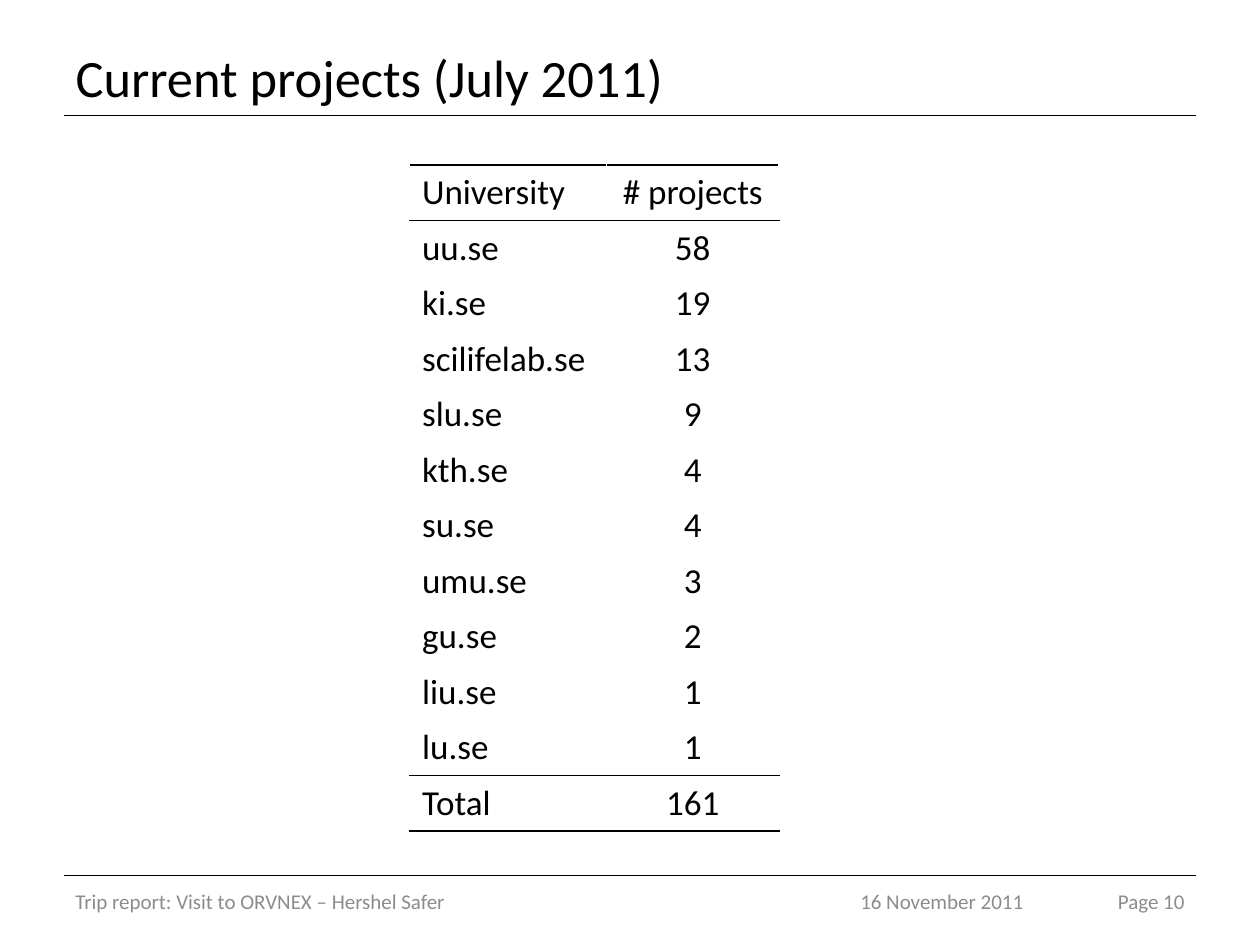
import pptx
import pptx.dml.color
import pptx.enum.shapes
import pptx.enum.text
import pptx.oxml
import pptx.oxml.ns
import pptx.util

Pt = pptx.util.Pt
ALIGN = pptx.enum.text.PP_ALIGN
MIDDLE = pptx.enum.text.MSO_ANCHOR.MIDDLE
FONT = "Calibri"
BLACK, WHITE, GREY = "000000", "FFFFFF", "8C8C8C"

PROJECTS = [
    ("University", "# projects"),
    ("uu.se", "58"),
    ("ki.se", "19"),
    ("scilifelab.se", "13"),
    ("slu.se", "9"),
    ("kth.se", "4"),
    ("su.se", "4"),
    ("umu.se", "3"),
    ("gu.se", "2"),
    ("liu.se", "1"),
    ("lu.se", "1"),
    ("Total", "161"),
]


def color(hex_string):
    return pptx.dml.color.RGBColor.from_string(hex_string)


def write(text_frame, text, size, hex_string, alignment=ALIGN.LEFT):
    paragraph = text_frame.paragraphs[0]
    paragraph.alignment = alignment
    run = paragraph.add_run()
    run.text = text
    run.font.name = FONT
    run.font.size = Pt(size)
    run.font.color.rgb = color(hex_string)


def add_rule(slide, left, right, y):
    connector = slide.shapes.add_connector(
        pptx.enum.shapes.MSO_CONNECTOR.STRAIGHT, Pt(left), Pt(y), Pt(right), Pt(y))
    connector.line.color.rgb = color(BLACK)
    connector.line.width = Pt(0.75)
    properties = connector._element.spPr
    properties.append(pptx.oxml.parse_xml(
        f'<a:effectLst {pptx.oxml.ns.nsdecls("a")}/>'))


def set_borders(cell, **sides):
    properties = cell._tc.get_or_add_tcPr()
    for index, side in enumerate("LRTB"):
        properties.insert(index, pptx.oxml.parse_xml(
            f'<a:ln{side} {pptx.oxml.ns.nsdecls("a")} w="{Pt(1)}"><a:solidFill>'
            f'<a:srgbClr val="{sides.get(side, WHITE)}"/></a:solidFill></a:ln{side}>'))


def add_title(slide, left, top, width, height):
    title = slide.shapes.title
    title.left, title.top = Pt(left), Pt(top)
    title.width, title.height = Pt(width), Pt(height)
    title.text_frame.vertical_anchor = MIDDLE
    write(title.text_frame, "Current projects (July 2011)", 30, BLACK)


def add_project_table(slide, left, top, column_widths, row_height, height):
    frame = slide.shapes.add_table(
        len(PROJECTS), len(column_widths), Pt(left), Pt(top),
        Pt(sum(column_widths)), Pt(height))
    table = frame.table
    table.first_row = False
    table.horz_banding = False
    for column, width in zip(table.columns, column_widths):
        column.width = Pt(width)
    for row in table.rows:
        row.height = Pt(row_height)
    frame.height = Pt(height)

    # Black rules surround the header and total rows only
    last = len(PROJECTS) - 1
    for row_index, values in enumerate(PROJECTS):
        above = BLACK if row_index in (0, 1, last) else WHITE
        below = BLACK if row_index in (0, last - 1, last) else WHITE
        for column_index, value in enumerate(values):
            cell = table.cell(row_index, column_index)
            cell.fill.background()
            set_borders(cell, T=above, B=below)
            alignment = ALIGN.CENTER if column_index else ALIGN.LEFT
            write(cell.text_frame, value, 20, BLACK, alignment)


def add_footer(slide, top, height):
    parts = [
        ("Trip report: Visit to ORVNEX – Hershel Safer", 36, 432, ALIGN.LEFT),
        ("Page 10", 609, 75, ALIGN.RIGHT),
        ("16 November 2011", 473, 130.5, ALIGN.CENTER),
    ]
    for text, left, width, alignment in parts:
        box = slide.shapes.add_textbox(Pt(left), Pt(top), Pt(width), Pt(height))
        box.text_frame.word_wrap = True
        box.text_frame.vertical_anchor = MIDDLE
        write(box.text_frame, text, 12, GREY, alignment)


def main():
    presentation = pptx.Presentation()
    presentation.slide_width, presentation.slide_height = Pt(720), Pt(540)
    slide = presentation.slides.add_slide(presentation.slide_layouts[5])
    slide.background.fill.solid()
    slide.background.fill.fore_color.rgb = color(WHITE)

    # Rules under the title and above the footer
    for y in (66, 500.5):
        add_rule(slide, 36.5, 683.5, y)

    add_title(slide, 36, 21.6, 648, 44)
    add_project_table(slide, 234, 94.3, (112.5, 98.8), 29.2, 374.4)
    add_footer(slide, 500.5, 28.8)
    presentation.save("out.pptx")


if __name__ == "__main__":
    main()
